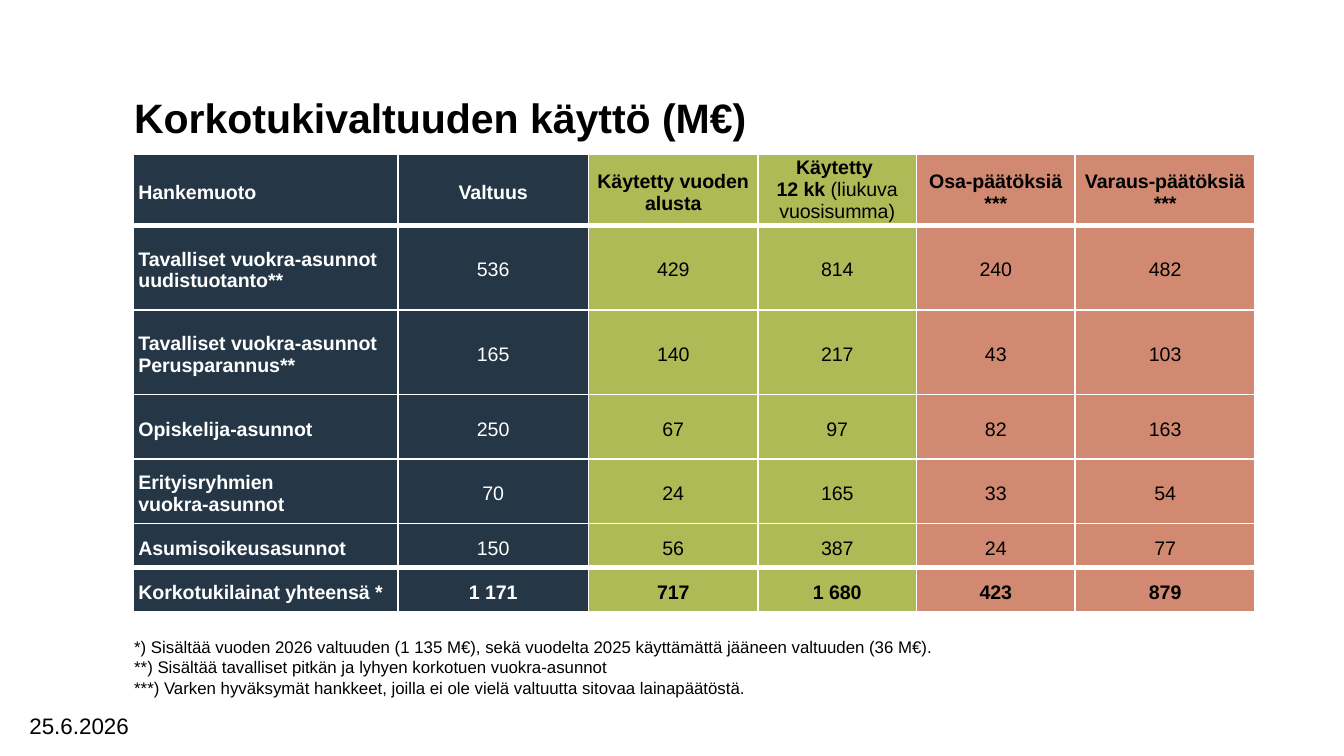
import pptx
import pptx.util
import pptx.dml.color
import pptx.enum.text
import pptx.oxml
import pptx.oxml.ns

Inches = pptx.util.Inches
Pt = pptx.util.Pt
Align = pptx.enum.text.PP_ALIGN
Anchor = pptx.enum.text.MSO_ANCHOR

HUES = {"navy": "253746", "green": "AEBA56", "coral": "D18A71",
        "white": "FFFFFF", "black": "000000"}
FILLS = ["navy", "navy", "green", "green", "coral", "coral"]
WIDTHS = [1.97, 1.42, 1.26, 1.18, 1.18, 1.34]
HEIGHTS = [0.48, 0.63, 0.63, 0.48, 0.48, 0.33, 0.33]
ROWS = [
    ["Hankemuoto", "Valtuus", "Käytetty vuoden alusta", "Käytetty \v12 kk ",
     "Osa-päätöksiä\n***", "Varaus-päätöksiä\n***"],
    ["Tavalliset vuokra-asunnot uudistuotanto**", "536", "429", "814", "240", "482"],
    ["Tavalliset vuokra-asunnot Perusparannus**", "165", "140", "217", "43", "103"],
    ["Opiskelija-asunnot", "250", "67", "97", "82", "163"],
    ["Erityisryhmien \vvuokra-asunnot", "70", "24", "165", "33", "54"],
    ["Asumisoikeusasunnot", "150", "56", "387", "24", "77"],
    ["Korkotukilainat yhteensä *", "1 171", "717", "1 680", "423", "879"],
]
NOTES = [
    "*) Sisältää vuoden 2026 valtuuden (1 135 M€), sekä vuodelta 2025 käyttämättä jääneen valtuuden (36 M€).",
    "**) Sisältää tavalliset pitkän ja lyhyen korkotuen vuokra-asunnot",
    "***) Varken hyväksymät hankkeet, joilla ei ole vielä valtuutta sitovaa lainapäätöstä.",
]


class Page:
    """Holds the style and the current slide, and draws text and tables."""

    def __init__(self, slide, face="Arial"):
        self.slide = slide
        self.face = face

    def style(self, frame, size, hue="black", bold=False, align=Align.LEFT):
        for para in frame.paragraphs:
            para.alignment = align
            for run in para.runs:
                font = run.font
                font.name, font.size, font.bold = self.face, Pt(size), bold
                font.color.rgb = pptx.dml.color.RGBColor.from_string(HUES[hue])

    def text(self, words, place, size, bold=False, anchor=Anchor.TOP):
        box = self.slide.shapes.add_textbox(*map(Inches, place))
        frame = box.text_frame
        frame.word_wrap = True
        frame.vertical_anchor = anchor
        frame.text = words
        self.style(frame, size, bold=bold)

    def edge(self, cell, side, width):
        props = cell._tc.get_or_add_tcPr()
        props.append(pptx.oxml.parse_xml(
            f'<a:ln{side} {pptx.oxml.ns.nsdecls("a")} w="{Pt(width)}"><a:solidFill>'
            f'<a:srgbClr val="{HUES["white"]}"/></a:solidFill></a:ln{side}>'))

    def cell(self, cell, words, fill, bold, align, top, base):
        cell.margin_left = cell.margin_right = cell.margin_top = Inches(0.04)
        cell.margin_bottom = 0
        cell.vertical_anchor = Anchor.MIDDLE
        for side, width in zip("LRTB", (1, 1, top, base)):
            self.edge(cell, side, width)
        cell.fill.solid()
        cell.fill.fore_color.rgb = pptx.dml.color.RGBColor.from_string(HUES[fill])
        cell.text_frame.text = words
        hue = "white" if fill == "navy" else "black"
        self.style(cell.text_frame, 10.5, hue, bold, align)

    def table(self, rows, left, top):
        frame = self.slide.shapes.add_table(
            len(rows), len(WIDTHS), Inches(left), Inches(top),
            Inches(sum(WIDTHS)), Inches(sum(HEIGHTS)))
        grid = frame.table
        grid.first_row = grid.horz_banding = False
        for col, width in zip(grid.columns, WIDTHS):
            col.width = Inches(width)
        for row, height in zip(grid.rows, HEIGHTS):
            row.height = Inches(height)
        last = len(rows) - 1
        for i, row in enumerate(rows):
            above = 3 if i in (1, last) else 1
            below = 3 if i in (0, last - 1) else 1
            for j, words in enumerate(row):
                self.cell(grid.cell(i, j), words, FILLS[j],
                          j == 0 or i in (0, last),
                          Align.CENTER if j else Align.LEFT, above, below)
        return grid

    def tail(self, cell, words):
        run = cell.text_frame.paragraphs[0].add_run()
        run.text = words
        self.style(cell.text_frame, 10.5, bold=True, align=Align.CENTER)
        run.font.bold = False
        cell.margin_top = 0


def main():
    deck = pptx.Presentation()
    deck.slide_width, deck.slide_height = Inches(10), Inches(10 * 9 / 16)
    page = Page(deck.slides.add_slide(deck.slide_layouts[6]))
    page.text("Korkotukivaltuuden käyttö (M€)", (0.9, 0.68, 6.86, 0.38), 22,
              bold=True, anchor=Anchor.MIDDLE)
    grid = page.table(ROWS, 0.99, 1.15)
    page.tail(grid.cell(0, 3), "(liukuva vuosisumma)")
    page.text("25.6.2026", (0.12, 5.25, 1.75, 0.25), 12)
    page.text("\n".join(NOTES), (0.9, 4.69, 9.32, 0.56), 9)
    deck.save("out.pptx")


if __name__ == "__main__":
    main()
